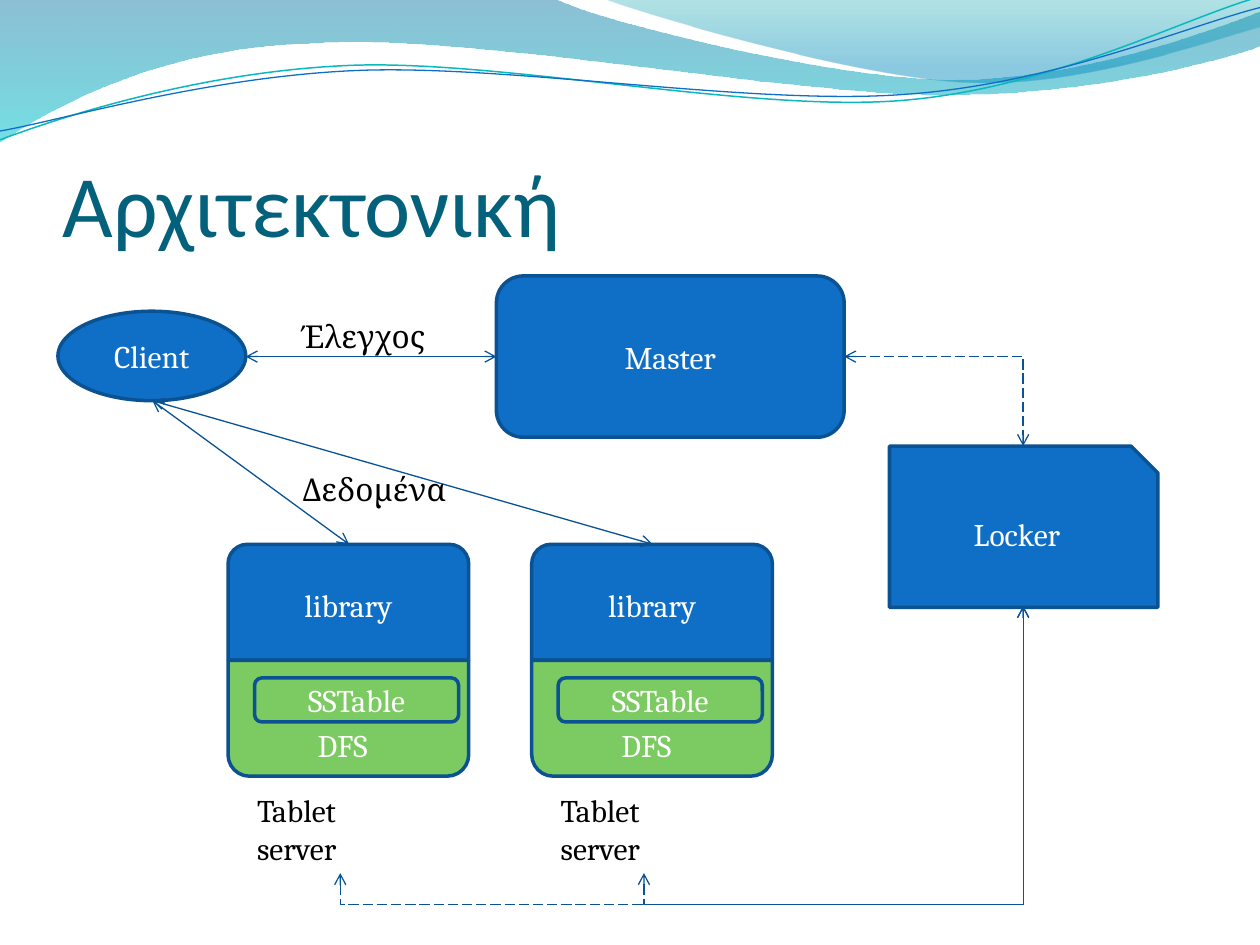
from lxml.etree import SubElement
from pptx import Presentation
from pptx.dml.color import RGBColor
from pptx.enum.dml import MSO_LINE
from pptx.enum.shapes import MSO_CONNECTOR, MSO_SHAPE
from pptx.enum.text import MSO_ANCHOR, PP_ALIGN
from pptx.oxml.ns import qn
from pptx.util import Inches, Pt

COLORS = {
    "blue": "0F6FC6", "outline": "0B5292", "green": "7CCA62", "arrow": "095295",
    "title": "04617B", "white": "FFFFFF", "black": "000000", "teal": "0AB8BF",
    "wave_top": "0074A1", "wave_bottom": "00C6CF",
    "crest_top": "00A1A9", "crest_bottom": "008BBF",
}
WIDE_WAVE = [
    [(0, 0)], [(4.4, -0.01)],
    [(4.76, 0.17), (6.64, 0.63), (7.58, 0.63)], [(8.53, 0.63), (9.58, 0.26), (10, 0.09)],
    [(10.01, 0.36)],
    [(9.83, 0.44), (8.7, 0.76), (7.46, 0.75)], [(6.22, 0.75), (3.82, 0.28), (2.57, 0.34)],
    [(1.29, 0.36), (0.46, 0.83), (-0.01, 1.13)],
]
CREST_WAVE = [
    [(4.79, -0.01)],
    [(5.09, 0.11), (6.82, 0.62), (7.69, 0.65)], [(8.56, 0.69), (9.61, 0.32), (10, 0.21)],
    [(10, 0)],
]
TEAL_CURVE = [
    [(0, 1.11)],
    [(0.48, 0.93), (1.58, 0.57), (2.77, 0.52)], [(3.95, 0.47), (5.93, 0.89), (7.13, 0.8)],
    [(8.33, 0.71), (9.38, 0.15), (9.98, -0.02)],
]
BLUE_CURVE = [
    [(0, 1.04)],
    [(0.47, 0.96), (1.64, 0.61), (2.83, 0.56)], [(4.03, 0.51), (5.97, 0.84), (7.17, 0.75)],
    [(8.36, 0.67), (9.41, 0.21), (10, 0.06)],
]


def color(name):
    """Return the named colour."""
    return RGBColor.from_string(COLORS[name])


def add_outline(slide, left, top, segments, close):
    """Draw a freeform of straight (one point) and cubic (three points) segments."""
    segments = [[(left + Inches(x), top + Inches(y)) for x, y in segment]
                for segment in segments]
    ends = [segment[-1] for segment in segments]
    builder = slide.shapes.build_freeform(*ends[0])
    builder.add_line_segments(ends[1:], close=close)
    shape = builder.convert_to_shape()
    shape.shadow.inherit = False
    for line, segment in zip(list(shape.element.spPr.iter(qn("a:lnTo"))), segments[1:]):
        if len(segment) == 3:
            curve = SubElement(line.getparent(), qn("a:cubicBezTo"))
            for x, y in segment:
                point = SubElement(curve, qn("a:pt"))
                point.set("x", str(x - shape.left))
                point.set("y", str(y - shape.top))
            line.getparent().replace(line, curve)
    return shape


def add_wave(slide, left, top, segments, stops):
    """Draw a wave filled by a translucent gradient from top to bottom."""
    shape = add_outline(slide, left, top, segments, True)
    shape.line.fill.background()
    shape.fill.gradient()
    shape.fill.gradient_angle = 270
    for stop, (position, name, _) in zip(shape.fill.gradient_stops, stops):
        stop.position = position
        stop.color.rgb = color(name)
    gradient_colors = shape.element.spPr.iter(qn("a:srgbClr"))
    for element, (_, _, opacity) in zip(gradient_colors, stops):
        SubElement(element, qn("a:alpha")).set("val", str(opacity * 1000))


def add_header(slide, left, top):
    """Draw the waves and thin curves along the top edge."""
    add_wave(slide, left, top, WIDE_WAVE, [(0, "wave_top", 45), (1, "wave_bottom", 55)])
    add_wave(slide, left, top, CREST_WAVE, [(0, "crest_top", 30), (0.8, "crest_bottom", 45)])
    for segments, name, width in ((TEAL_CURVE, "teal", 0.85), (BLUE_CURVE, "blue", 0.75)):
        curve = add_outline(slide, left, top, segments, False)
        curve.fill.background()
        curve.line.color.rgb = color(name)
        curve.line.width = Pt(width)


def write(shape, text, name="white", size=18, font="Cambria",
          align=PP_ALIGN.CENTER, anchor=MSO_ANCHOR.MIDDLE, margin=0.09):
    """Put one formatted run into a shape."""
    frame = shape.text_frame
    frame.word_wrap = True
    frame.vertical_anchor = anchor
    frame.margin_left = frame.margin_right = Inches(margin)
    paragraph = frame.paragraphs[0]
    paragraph.alignment = align
    run = paragraph.add_run()
    run.text = text
    run.font.size = Pt(size)
    run.font.name = font
    run.font.color.rgb = color(name)


def add_label(slide, left, top, width, height, text):
    """Add a plain black caption."""
    label = slide.shapes.add_textbox(left, top, width, height)
    write(label, text, "black", align=PP_ALIGN.LEFT, anchor=MSO_ANCHOR.TOP)


def add_title(slide, left, top, width, height, text):
    """Add the slide title."""
    title = slide.shapes.add_textbox(left, top, width, height)
    title.text_frame.margin_bottom = 0
    write(title, text, "title", 50, "Calibri", PP_ALIGN.LEFT, MSO_ANCHOR.BOTTOM, 0)


def add_node(slide, kind, left, top, width, height, text, fill="blue", anchor=MSO_ANCHOR.MIDDLE):
    """Add an outlined shape with centred text."""
    node = slide.shapes.add_shape(kind, left, top, width, height)
    node.shadow.inherit = False
    if fill:
        node.fill.solid()
        node.fill.fore_color.rgb = color(fill)
    else:
        node.fill.background()
    node.line.color.rgb = color("outline")
    node.line.width = Pt(2)
    write(node, text, anchor=anchor)
    return node


def add_tablet_server(slide, left, top):
    """Add a tablet server: library, storage, table and caption."""
    width, height = Inches(1.91), Inches(0.92)
    kind = MSO_SHAPE.ROUND_2_SAME_RECTANGLE
    add_node(slide, kind, left, top, width, height, "library")
    storage = add_node(slide, kind, left, top + height, width, height, "DFS", "green",
                       MSO_ANCHOR.BOTTOM)
    storage.adjustments[0], storage.adjustments[1] = 0, 0.185
    storage.text_frame.margin_left = 0
    add_node(slide, MSO_SHAPE.ROUNDED_RECTANGLE, left + Inches(0.21), top + Inches(1.06),
             Inches(1.62), Inches(0.35), "SSTable", None)
    add_label(slide, left + Inches(0.14), top + Inches(1.91), Inches(1.49), Inches(0.7),
              "Tablet server")


def add_arrow(slide, start, end, kind=MSO_CONNECTOR.STRAIGHT, dashed=False):
    """Add a thin connector with open arrowheads at both ends."""
    arrow = slide.shapes.add_connector(kind, *start, *end)
    arrow.line.color.rgb = color("arrow")
    arrow.line.width = Pt(0.75)
    if dashed:
        arrow.line.dash_style = MSO_LINE.LONG_DASH
    line = arrow.line._get_or_add_ln()
    for tag in ("a:headEnd", "a:tailEnd"):
        SubElement(line, qn(tag)).set("type", "arrow")
    SubElement(arrow._element.spPr, qn("a:effectLst"))
    return arrow


def add_corner_arrow(slide, start, end):
    """Add a dashed arrow that goes across and then down."""
    arrow = add_arrow(slide, start, end, MSO_CONNECTOR.ELBOW, True)
    arrow._element.spPr.find(qn("a:prstGeom")).set("prst", "bentConnector2")


def add_loop_arrow(slide, start, end, drop):
    """Add a dashed arrow that dips below its start before rising to its end."""
    arrow = add_arrow(slide, start, end, MSO_CONNECTOR.ELBOW, True)
    across, rise = end[0] - start[0], start[1] - end[1]
    arrow.left, arrow.top = start[0] + (across - rise) // 2, end[1] + (rise - across) // 2
    arrow.width, arrow.height = rise, across
    properties = arrow._element.spPr
    for key, value in (("rot", "5400000"), ("flipH", "1"), ("flipV", "1")):
        properties.find(qn("a:xfrm")).set(key, value)
    guide = SubElement(properties.find(qn("a:prstGeom")).find(qn("a:avLst")), qn("a:gd"))
    guide.set("name", "adj1")
    guide.set("fmla", f"val {round(-100000 * drop / rise)}")


def add_architecture(slide, left, top):
    """Add the client, master, lock service and tablet servers with their links."""
    def at(x, y):
        return left + Inches(x), top + Inches(y)

    servers = [1.35, 3.76]
    for x in servers:
        add_tablet_server(slide, *at(x, 2.13))
    add_node(slide, MSO_SHAPE.OVAL, *at(0, 0.28), Inches(1.49), Inches(0.71), "Client")
    master = add_node(slide, MSO_SHAPE.ROUNDED_RECTANGLE, *at(3.48, 0), Inches(2.76),
                      Inches(1.28), "Master")
    add_node(slide, MSO_SHAPE.SNIP_1_RECTANGLE, *at(6.6, 1.35), Inches(2.13), Inches(1.28),
             "Locker")
    for x in reversed(servers):
        add_loop_arrow(slide, at(x + 0.89, 4.74), at(7.66, 2.62), Inches(0.25))
    add_arrow(slide, at(1.49, 0.64), at(3.48, 0.64)).end_connect(master, 1)
    for x in servers:
        add_arrow(slide, at(0.75, 0.99), at(x + 0.96, 2.13))
    for y, text in ((0.28, "Έλεγχος"), (1.49, "Δεδομένα")):
        add_label(slide, *at(1.85, y), Inches(1.42), Inches(0.39), text)
    add_corner_arrow(slide, at(6.24, 0.64), at(7.66, 1.35))


def main():
    """Build and save the presentation."""
    presentation = Presentation()
    presentation.slide_width, presentation.slide_height = Inches(10), Inches(7.5)
    slide = presentation.slides.add_slide(presentation.slide_layouts[6])
    add_header(slide, 0, 0)
    add_title(slide, Inches(0.5), Inches(0.77), Inches(9), Inches(1.25), "Αρχιτεκτονική")
    add_architecture(slide, Inches(0.46), Inches(2.19))
    presentation.save("out.pptx")


if __name__ == "__main__":
    main()
